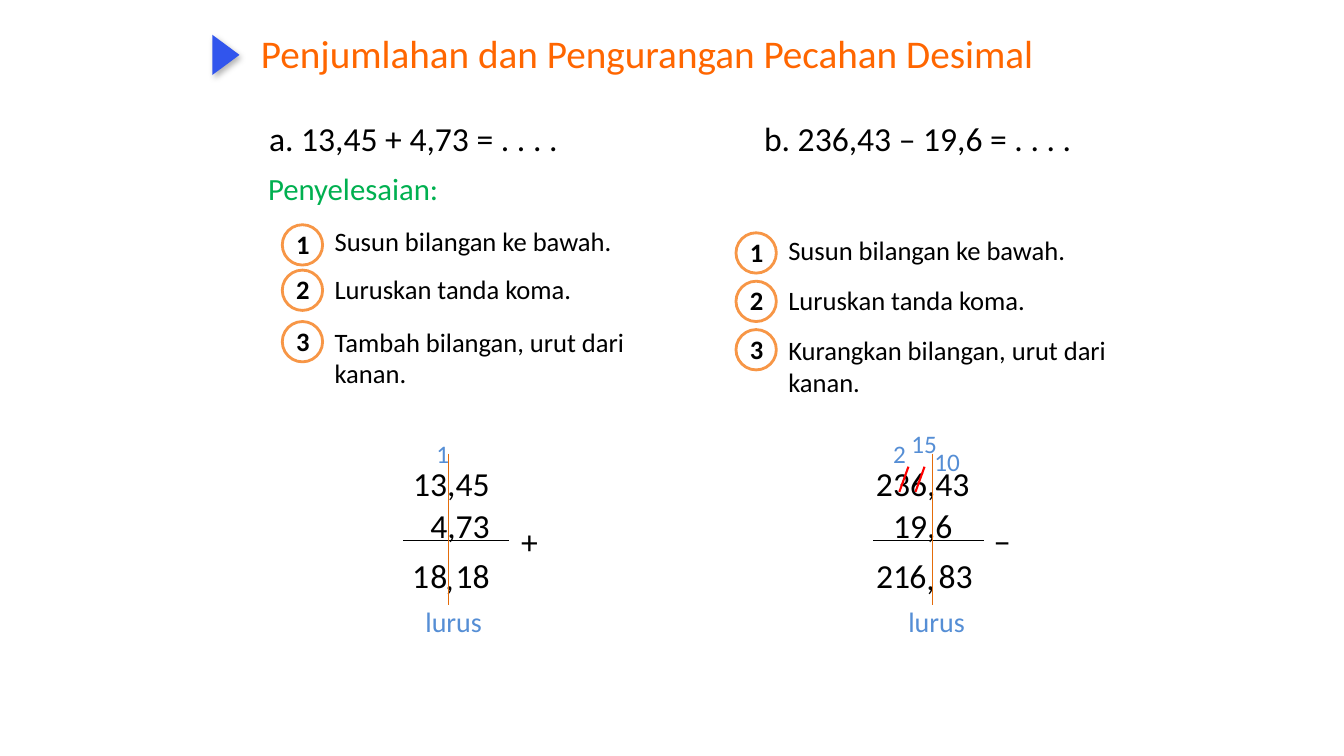
from lxml import etree
from pptx import Presentation
from pptx.dml.color import RGBColor
from pptx.enum.shapes import MSO_CONNECTOR, MSO_SHAPE
from pptx.enum.text import MSO_ANCHOR, MSO_AUTO_SIZE
from pptx.oxml import parse_xml
from pptx.oxml.ns import nsdecls, qn
from pptx.util import Inches, Pt

STRAIGHT = MSO_CONNECTOR.STRAIGHT
OVAL, TRIANGLE = MSO_SHAPE.OVAL, MSO_SHAPE.ISOSCELES_TRIANGLE
MIDDLE, GROW = MSO_ANCHOR.MIDDLE, MSO_AUTO_SIZE.SHAPE_TO_FIT_TEXT

BLACK = RGBColor(0x00, 0x00, 0x00)
WHITE = RGBColor(0xFF, 0xFF, 0xFF)
GREEN = RGBColor(0x00, 0xB0, 0x50)
TITLE_ORANGE = RGBColor(0xFF, 0x66, 0x00)
RING_ORANGE = RGBColor(0xF7, 0x96, 0x46)
LINE_ORANGE = RGBColor(0xE4, 0x6C, 0x0A)
BLUE = RGBColor(0x55, 0x8E, 0xD5)
MARKER_BLUE = RGBColor(0x31, 0x55, 0xED)
RED = RGBColor(0xFF, 0x00, 0x00)

prs = Presentation()
prs.slide_width, prs.slide_height = Inches(13.33), Inches(7.5)
s = prs.slides.add_slide(prs.slide_layouts[6])


def add_text(text, x, y, w, h, size=24, color=BLACK, bold=False, spacing=None):
    sp = s.shapes.add_textbox(Inches(x), Inches(y), Inches(w), Inches(h))
    tf = sp.text_frame
    tf.word_wrap = True
    tf.auto_size = GROW
    p = tf.paragraphs[0]
    p.line_spacing = spacing
    r = p.add_run()
    r.text = text
    r.font.color.rgb = color
    fmt = {"name": "Calibri", "size": Pt(size), "bold": bold}
    for key, value in fmt.items():
        setattr(r.font, key, value)
    return sp


def add_line(x1, y1, x2, y2, color, width=0.75):
    sp = s.shapes.add_connector(STRAIGHT, Inches(x1), Inches(y1), Inches(x2), Inches(y2))
    sp.line.color.rgb = color
    sp.line.width = Pt(width)
    etree.SubElement(sp._element.spPr, qn("a:effectLst"))


marker = s.shapes.add_shape(TRIANGLE, Inches(2.04), Inches(0.41), Inches(0.4), Inches(0.27))
marker.rotation = 90
marker.fill.solid()
marker.fill.fore_color.rgb = MARKER_BLUE
marker.line.fill.background()
marker._element.spPr.append(parse_xml(
    f'<a:effectLst {nsdecls("a")}><a:outerShdw blurRad="57150" dist="33020" dir="3180000" '
    'algn="ctr" rotWithShape="0"><a:srgbClr val="000000"><a:alpha val="30000"/>'
    '</a:srgbClr></a:outerShdw></a:effectLst>'))

title = add_text("Penjumlahan dan Pengurangan Pecahan Desimal",
                 2.49, 0.17, 8.59, 0.76, 28, TITLE_ORANGE, spacing=0.9)
title.text_frame.auto_size = MSO_AUTO_SIZE.NONE
title.text_frame.vertical_anchor = MIDDLE

problems = add_text("a. 13,45 + 4,73 = . . . .\tb. 236,43 – 19,6 = . . . .", 2.57, 1.12, 8.94, 0.5)
pPr = problems.text_frame.paragraphs[0]._p.get_or_add_pPr()
tabs = etree.SubElement(pPr, qn("a:tabLst"))
etree.SubElement(tabs, qn("a:tab"), pos=str(Inches(4.91)), algn="l")
add_text("Penyelesaian:", 2.56, 1.63, 2.51, 0.47, 22, GREEN)

step_columns = [
    (2.8, [("Susun bilangan ke bawah.", 2.18, 2.23),
           ("Luruskan tanda koma.", 2.66, 2.68),
           ("Tambah bilangan, urut dari kanan.", 3.18, 3.19)]),
    (7.3, [("Susun bilangan ke bawah.", 2.27, 2.31),
           ("Luruskan tanda koma.", 2.77, 2.79),
           ("Kurangkan bilangan, urut dari kanan.", 3.26, 3.27)]),
]
for x, steps in step_columns:
    for number, (step, text_y, ring_y) in enumerate(steps, 1):
        add_text(step, x + 0.42, text_y, 3.79, 0.42, 19)
        ring = s.shapes.add_shape(OVAL, Inches(x), Inches(ring_y), Inches(0.4), Inches(0.4))
        ring.shadow.inherit = False
        ring.fill.solid()
        ring.fill.fore_color.rgb = WHITE
        ring.line.color.rgb = RING_ORANGE
        ring.line.width = Pt(2)
        add_text(str(number), x + 0.04, ring_y - 0.02, 0.3, 0.42, 19, bold=True)

sums = [
    {"rows": [("13,45", 4.0, 4.44), ("4,73", 4.17, 4.86)],
     "rule": (4.0, 5.05), "sign": ("+", 5.07), "comma_line": 4.45, "lurus": 4.12,
     "result": [("1", 3.99), ("8", 4.17), (",", 4.32), ("1", 4.42), ("8", 4.59)],
     "carries": [("1", 4.23, 4.22)], "strikes": []},
    {"rows": [("236,43", 8.59, 4.44), ("19,6", 8.76, 4.86)],
     "rule": (8.66, 9.76), "sign": ("−", 9.76), "comma_line": 9.25, "lurus": 8.91,
     "result": [("2", 8.59), ("1", 8.76), ("6", 8.92), (",", 9.09), ("8", 9.21), ("3", 9.38)],
     "carries": [("2", 8.76, 4.22), ("15", 8.94, 4.13), ("10", 9.17, 4.3)],
     "strikes": [9.01, 9.17]},
]
for item in sums:
    for text, x, y in item["rows"]:
        add_text(text, x, y, 1.17, 0.57, spacing=1.25)
    left, right = item["rule"]
    add_line(left, 5.36, right, 5.36, BLACK)
    sign, x = item["sign"]
    add_text(sign, x, 5.02, 0.58, 0.57, spacing=1.25)
    for digit, x in item["result"]:
        add_text(digit, x, 5.38 if digit == "," else 5.36, 0.35, 0.57, spacing=1.25)
    add_line(item["comma_line"], 4.5, item["comma_line"], 6, LINE_ORANGE)
    add_text("lurus", item["lurus"], 5.86, 0.95, 0.49, 20, BLUE, spacing=1.25)
    for digit, x, y in item["carries"]:
        add_text(digit, x, y, 0.35 if len(digit) == 1 else 0.57, 0.45, 18, BLUE, spacing=1.25)
    for x in item["strikes"]:
        add_line(x, 4.63, x - 0.09, 4.88, RED, 1.5)

prs.save("out.pptx")
